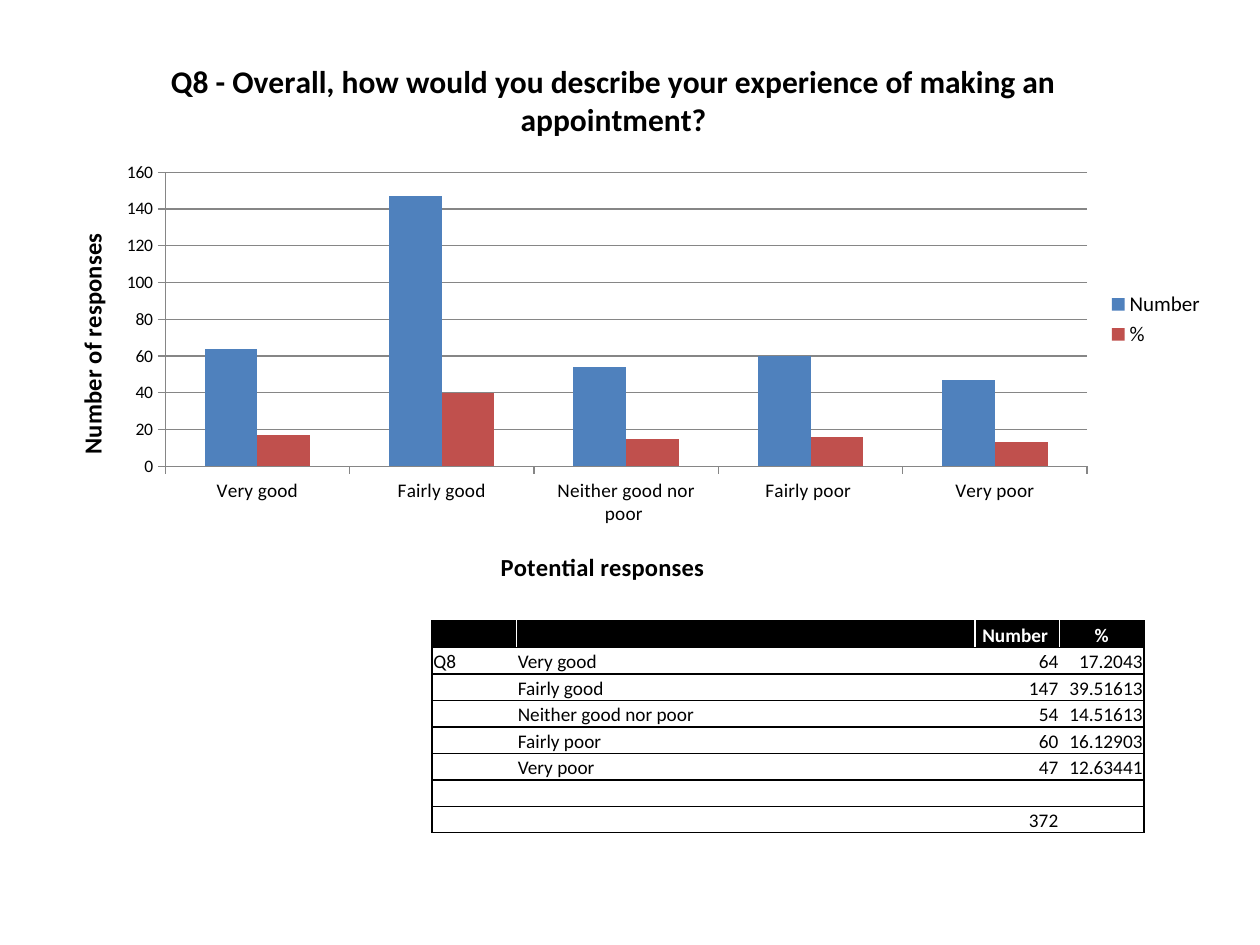
from lxml.etree import SubElement
from pptx import Presentation
from pptx.chart.data import CategoryChartData
from pptx.dml.color import RGBColor
from pptx.enum.chart import XL_CHART_TYPE as ChartType, XL_LEGEND_POSITION as LegendPos
from pptx.enum.chart import XL_TICK_MARK as Tick
from pptx.enum.text import MSO_ANCHOR as Anchor, PP_ALIGN as Align
from pptx.oxml import parse_xml
from pptx.oxml.ns import nsdecls, qn
from pptx.util import Inches, Pt

# Content
QUESTION = "Q8 - Overall, how would you describe your experience of making an appointment?"
ANSWER_AXIS, COUNT_AXIS = "Potential responses", "Number of responses"
ANSWERS = ["Very good", "Fairly good", "Neither good nor poor ", "Fairly poor ", "Very poor"]
COUNTS = [64, 147, 54, 60, 47]
SHARES = [17, 40, 15, 16, 13]
EXACT_SHARES = ["17.2043", "39.51613", "14.51613", "16.12903", "12.63441"]
HEADER = ["", "", "Number ", "%"]
RESPONSES = [
    ["Q8" if i == 0 else "", answer.strip(), str(count), share]
    for i, (answer, count, share) in enumerate(zip(ANSWERS, COUNTS, EXACT_SHARES))
]
ROWS = [HEADER, *RESPONSES, [""] * 4, ["", "", str(sum(COUNTS)), ""]]

# Format
FONT = "Calibri"
COLOURS = {"ink": "000000", "paper": "FFFFFF", "count": "4F81BD", "share": "C0504D", "grid": "868686"}
SLIDE_W, SLIDE_H = 10, 7.5
CHART_BOX = (0.28, 0.29, 9.38, 4.49)
TABLE_LEFT, TABLE_TOP, ROW_H = 3.43, 4.93, 0.21
COLUMN_WIDTHS = [0.67, 3.64, 0.67, 0.67]
COLUMN_ALIGNS = [Align.LEFT, Align.LEFT, Align.RIGHT, Align.RIGHT]


def rgb(name):
    return RGBColor.from_string(COLOURS[name])


def style(font, size, bold=False, colour="ink"):
    font.name, font.size, font.bold = FONT, Pt(size), bold
    font.color.rgb = rgb(colour)


def write(frame, text, size=11, bold=False, colour="ink", align=None):
    paragraph = frame.paragraphs[0]
    paragraph.alignment = align
    if text:
        run = paragraph.add_run()
        run.text = text
        style(run.font, size, bold, colour)
    else:
        SubElement(paragraph._p, qn("a:endParaRPr"), sz=str(size * 100))


def place(part, x, y, w=None, h=None):
    """Fix a chart part at shares of the chart's size."""
    target = '<c:layoutTarget val="inner"/>' if w else ""
    modes = '<c:xMode val="edge"/><c:yMode val="edge"/>'
    values = "".join(f'<c:{k} val="{v}"/>' for k, v in zip("xywh", (x, y, w, h)) if v)
    layout = parse_xml(
        f'<c:layout {nsdecls("c")}><c:manualLayout>{target}{modes}{values}</c:manualLayout></c:layout>'
    )
    for old in part.findall(qn("c:layout")):
        part.remove(old)
    text = part.find(qn("c:tx"))
    part.insert(0 if text is None else part.index(text) + 1, layout)


def add_title(owner, text, size, x, y):
    title = owner.chart_title if hasattr(owner, "chart_title") else owner.axis_title
    write(title.text_frame, text, size=size, bold=True)
    place(title._element, x, y)


def add_border(cell, side):
    line = SubElement(cell._tc.get_or_add_tcPr(), qn(f"a:ln{side}"), w=str(Pt(1)))
    fill = SubElement(line, qn("a:solidFill"))
    SubElement(fill, qn("a:srgbClr"), val=COLOURS["ink"])


def add_response_chart(slide):
    data = CategoryChartData()
    data.categories = ANSWERS
    data.add_series("Number", COUNTS)
    data.add_series("%", SHARES)
    box = [Inches(v) for v in CHART_BOX]
    chart = slide.shapes.add_chart(ChartType.COLUMN_CLUSTERED, *box, data).chart
    style(chart.font, 10)
    add_title(chart, QUESTION, 18, 0.11, 0.03)
    chart.chart_title.include_in_layout = False

    # Columns
    plot = chart.plots[0]
    plot.gap_width, plot.overlap, plot.vary_by_categories = 150, 0, False
    for series, colour in zip(plot.series, ("count", "share")):
        series.format.fill.solid()
        series.format.fill.fore_color.rgb = rgb(colour)
    place(chart._chartSpace.chart.plotArea, 0.11, 0.24, 0.78, 0.52)

    # Axes
    answers, counts = chart.category_axis, chart.value_axis
    add_title(answers, ANSWER_AXIS, 14, 0.39, 0.9)
    add_title(counts, COUNT_AXIS, 14, 0.03, 0.34)
    counts.axis_title.text_frame._txBody.bodyPr.set("rot", "-5400000")
    counts.has_major_gridlines = True
    counts.minimum_scale, counts.maximum_scale, counts.major_unit = 0, 160, 20
    for axis, size in ((answers, 11), (counts, 10)):
        axis.major_tick_mark, axis.minor_tick_mark = Tick.OUTSIDE, Tick.NONE
        style(axis.tick_labels.font, size)
    for part in (answers, counts, counts.major_gridlines):
        part.format.line.color.rgb = rgb("grid")
        part.format.line.width = Pt(0.75)

    # Legend
    chart.has_legend = True
    chart.legend.position = LegendPos.RIGHT
    chart.legend.include_in_layout = False
    style(chart.legend.font, 12)


def add_response_table(slide):
    table = slide.shapes.add_table(
        len(ROWS), len(COLUMN_WIDTHS), Inches(TABLE_LEFT), Inches(TABLE_TOP),
        Inches(sum(COLUMN_WIDTHS)), Inches(ROW_H * len(ROWS)),
    ).table
    for column, width in zip(table.columns, COLUMN_WIDTHS):
        column.width = Inches(width)
    last = len(COLUMN_WIDTHS) - 1
    for r, texts in enumerate(ROWS):
        table.rows[r].height = Inches(ROW_H)
        is_header = r == 0
        for c, text in enumerate(texts):
            cell = table.cell(r, c)
            cell.margin_left = cell.margin_right = cell.margin_top = Inches(0.01)
            cell.margin_bottom = 0
            cell.vertical_anchor = Anchor.BOTTOM
            write(
                cell.text_frame, text, bold=is_header,
                colour="paper" if is_header else "ink",
                align=Align.CENTER if is_header else COLUMN_ALIGNS[c],
            )
            for side in ("L" if c == 0 else "") + ("R" if c == last else "") + "TB":
                add_border(cell, side)
            cell.fill.solid()
            cell.fill.fore_color.rgb = rgb("ink" if is_header else "paper")


def main():
    deck = Presentation()
    deck.slide_width, deck.slide_height = Inches(SLIDE_W), Inches(SLIDE_H)
    slide = deck.slides.add_slide(deck.slide_layouts[6])
    add_response_chart(slide)
    add_response_table(slide)
    deck.save("out.pptx")


if __name__ == "__main__":
    main()
